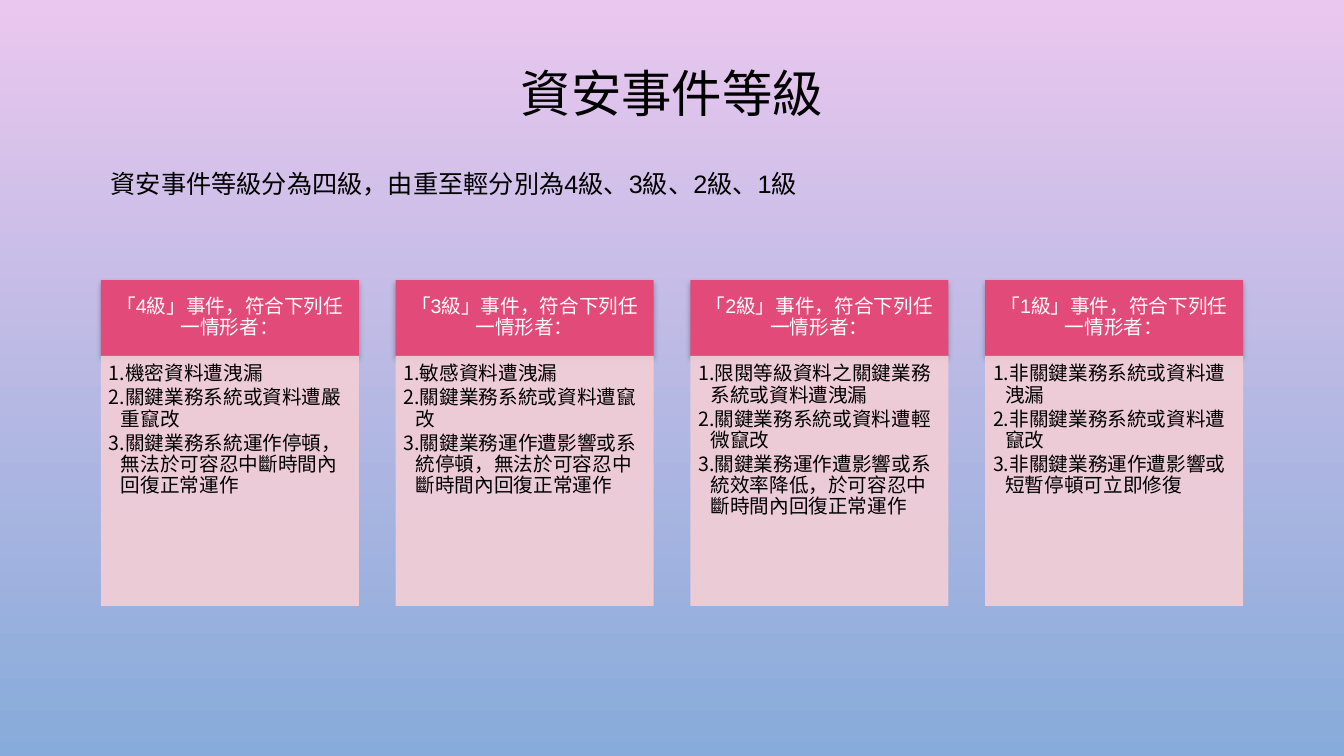
from lxml import etree
from pptx import Presentation
from pptx import util as u
from pptx.dml.color import RGBColor
from pptx.enum import shapes, text
from pptx.oxml import ns

LEVELS = [
    ("4", ["機密資料遭洩漏",
           "關鍵業務系統或資料遭嚴重竄改",
           "關鍵業務系統運作停頓，無法於可容忍中斷時間內回復正常運作"]),
    ("3", ["敏感資料遭洩漏",
           "關鍵業務系統或資料遭竄改",
           "關鍵業務運作遭影響或系統停頓，無法於可容忍中斷時間內回復正常運作"]),
    ("2", ["限閱等級資料之關鍵業務系統或資料遭洩漏",
           "關鍵業務系統或資料遭輕微竄改",
           "關鍵業務運作遭影響或系統效率降低，於可容忍中斷時間內回復正常運作"]),
    ("1", ["非關鍵業務系統或資料遭洩漏",
           "非關鍵業務系統或資料遭竄改",
           "非關鍵業務運作遭影響或短暫停頓可立即修復"]),
]


def color(value):
    return RGBColor.from_string(value)


def add_xml(parent, tag, **attributes):
    return etree.SubElement(parent, ns.qn(tag), attributes)


class SlideBuilder:
    font = "Arial"
    black, white = "000000", "FFFFFF"
    header_fill, body_fill = "E24A79", "F3CED6"

    def __init__(self, slide):
        self.slide = slide

    def background(self, top, bottom):
        fill = self.slide.background.fill
        fill.gradient()
        fill.gradient_angle = 270
        for stop, value in zip(fill.gradient_stops, (top, bottom)):
            stop.color.rgb = color(value)

    def set_text(self, shape, lines, size, font_color, align, anchor, insets,
                 spacing=None, numbered=False):
        frame = shape.text_frame
        frame.word_wrap = True
        frame.vertical_anchor = anchor
        (frame.margin_left, frame.margin_top,
         frame.margin_right, frame.margin_bottom) = map(u.Inches, insets)
        frame.text = "\n".join(lines)
        for index, paragraph in enumerate(frame.paragraphs):
            paragraph.alignment = align
            paragraph.line_spacing = spacing
            if index:
                paragraph.space_before = u.Pt(2.1)
            if numbered:
                self.number(paragraph)
            paragraph.font.name = self.font
            paragraph.font.size = u.Pt(size)
            paragraph.font.color.rgb = color(font_color)

    def number(self, paragraph):
        paragraph.level = 1
        properties = paragraph._p.get_or_add_pPr()
        properties.set("marL", str(u.Inches(0.12)))
        properties.set("indent", str(-u.Inches(0.12)))
        add_xml(add_xml(properties, "a:buClr"), "a:srgbClr", val=self.black)
        add_xml(properties, "a:buAutoNum", type="arabicPeriod")

    def text_box(self, box, line, size, align, anchor, spacing=None):
        shape = self.slide.shapes.add_textbox(*map(u.Inches, box))
        self.set_text(shape, [line], size, self.black, align, anchor,
                      (0.1, 0.05, 0.1, 0.05), spacing)

    def rectangle(self, box, fill):
        shape = self.slide.shapes.add_shape(
            shapes.MSO_SHAPE.RECTANGLE, *map(u.Inches, box))
        shape.fill.solid()
        shape.fill.fore_color.rgb = color(fill)
        shape.line.fill.background()
        shape.shadow.inherit = False
        return shape

    def header(self, box, line):
        shape = self.rectangle(box, self.header_fill)
        effects = shape._element.spPr.find(ns.qn("a:effectLst"))
        shadow = add_xml(effects, "a:outerShdw", blurRad=str(u.Pt(4)),
                         dist=str(u.Pt(2)), dir="5400000", rotWithShape="0")
        shade = add_xml(shadow, "a:srgbClr", val=self.black)
        add_xml(shade, "a:alpha", val="28000")
        self.set_text(shape, [line], 14, self.white, text.PP_ALIGN.CENTER,
                      text.MSO_ANCHOR.MIDDLE, (0.11, 0.06, 0.11, 0.06), 0.9)

    def conditions(self, box, lines):
        shape = self.rectangle(box, self.body_fill)
        fill = shape._element.spPr.find(ns.qn("a:solidFill"))
        add_xml(fill[0], "a:alpha", val="90000")
        self.set_text(shape, lines, 14, self.black, text.PP_ALIGN.LEFT,
                      text.MSO_ANCHOR.TOP, (0.08, 0.08, 0.11, 0.12), 0.9,
                      numbered=True)


def main():
    presentation = Presentation()
    presentation.slide_width = u.Inches(13.33)
    presentation.slide_height = u.Inches(7.5)
    builder = SlideBuilder(
        presentation.slides.add_slide(presentation.slide_layouts[6]))
    builder.background("EAC7EE", "87ABDA")

    # Title
    builder.text_box((1, 0.08, 11.33, 1.75), "資安事件等級", 36,
                     text.PP_ALIGN.CENTER, text.MSO_ANCHOR.MIDDLE, 0.9)

    # One column for each level
    left, right, width = 1, 12.33, 2.56
    pitch = (right - left - width) / (len(LEVELS) - 1)
    top, header_height, body_height = 2.78, 0.75, 2.48
    for index, (level, lines) in enumerate(LEVELS):
        x = left + index * pitch
        builder.header((x, top, width, header_height),
                       f"「{level}級」事件，符合下列任一情形者：")
        builder.conditions((x, top + header_height, width, body_height), lines)

    # Introduction
    builder.text_box((1, 1.62, 11.33, 0.4),
                     "資安事件等級分為四級，由重至輕分別為4級、3級、2級、1級",
                     18, text.PP_ALIGN.LEFT, text.MSO_ANCHOR.TOP)

    presentation.save("out.pptx")


if __name__ == "__main__":
    main()
